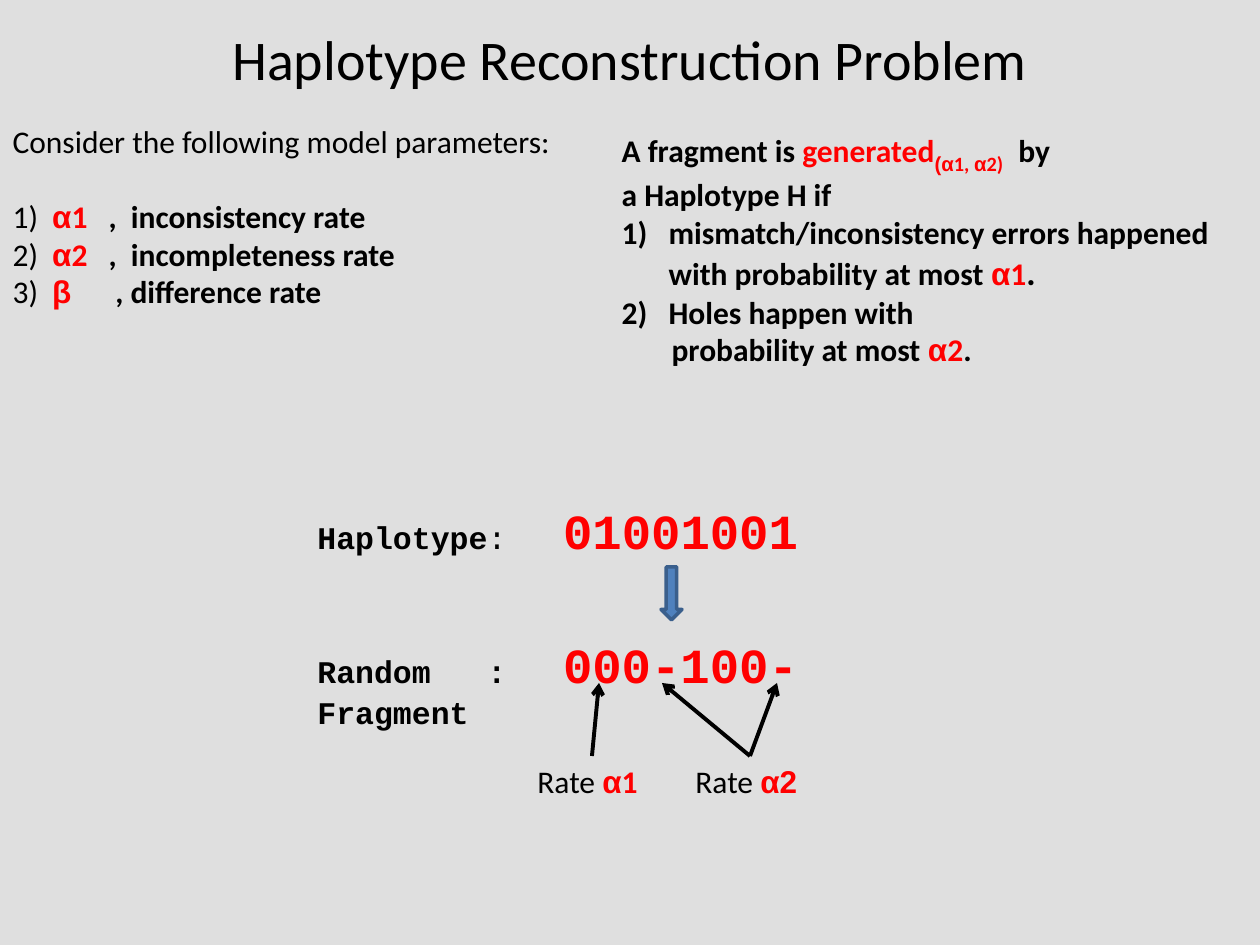
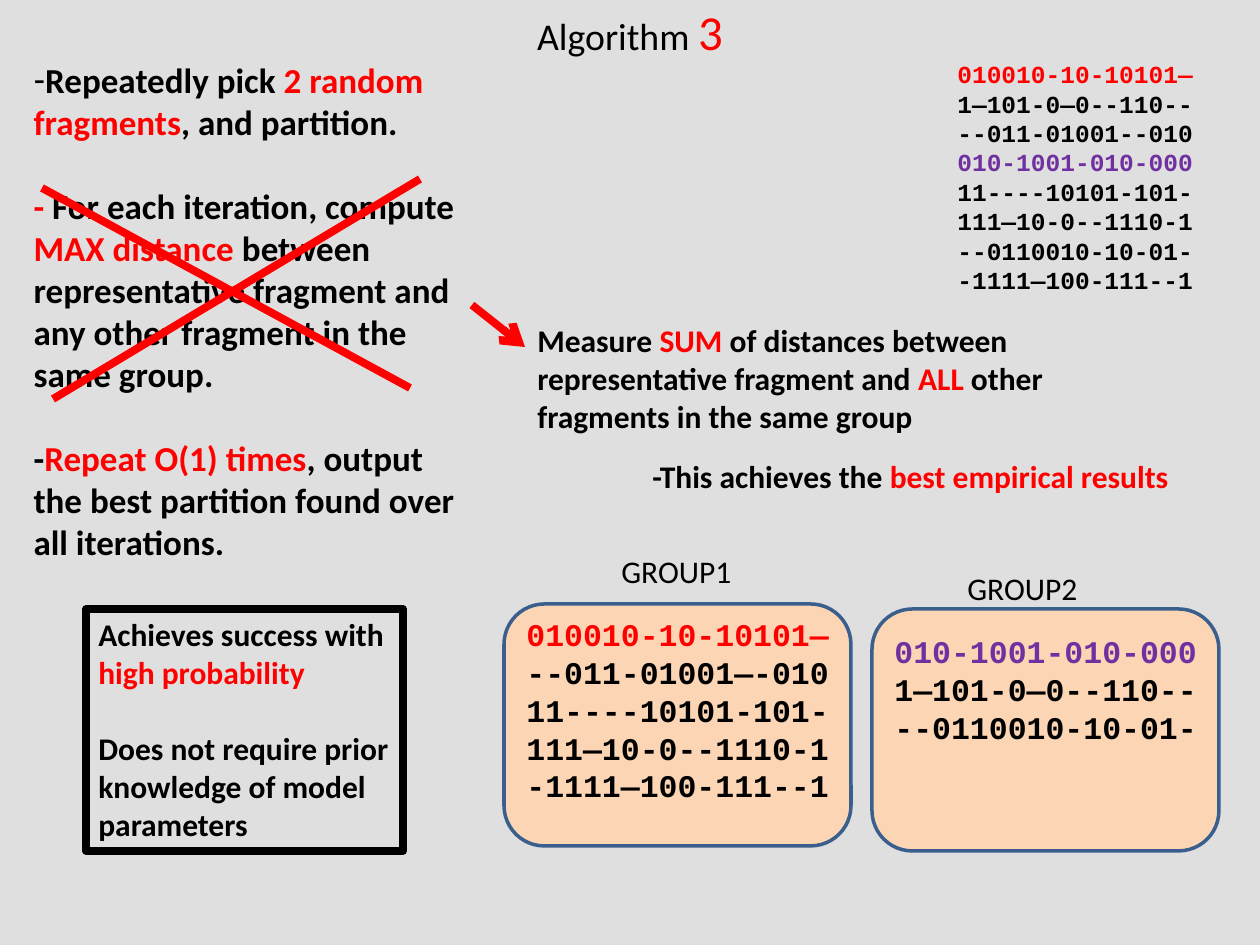
"""Build two slides on haplotype reconstruction: the model and Algorithm 3."""
from dataclasses import dataclass, field
from lxml.etree import SubElement
from pptx import Presentation
from pptx.dml.color import RGBColor as RGB
from pptx.enum.shapes import MSO_CONNECTOR as CONN, MSO_SHAPE as SHAPE
from pptx.enum.text import MSO_ANCHOR as ANCHOR, MSO_AUTO_SIZE as FIT, PP_ALIGN as ALIGN
from pptx.oxml.ns import qn
from pptx.util import Emu, Pt


@dataclass(frozen=True)
class Theme:
    back: str = "DFDFDF"
    ink: str = "000000"
    blue: str = "4F81BD"
    edge: str = "3A5F8C"
    peach: str = "FCD5B5"
    red: str = "FF0000"
    violet: str = "7030A0"
    sans: str = "Calibri"
    mono: str = "Courier New"
    greek: str = "Arial"
    text: float = 18
    sizes: dict = field(default_factory=lambda: {
        "title": 32, "subtitle": 21.6, "number": 27.9,
        "code": 28, "medium": 20, "small": 14})


T = Theme()


def P(*runs, **fmt):
    return runs, fmt


def gap(extra, style=""):
    return " ", style, extra


def sequences(first, color, *rest):
    return [P((first, f"mono bold {color}"))] + [P((s, "mono bold")) for s in rest]


def parameter(number, symbol, spread, rate, **fmt):
    return P((f"{number})", ""), gap(4), *symbol, gap(spread), *rate, **fmt)


MODEL_TITLE = [P(("Haplotype Reconstruction Problem", "title"))]
ALGORITHM_TITLE = [P(("Algorithm ", "subtitle"), ("3", "number red"))]

ALPHA = ("α", "greek bold red")
PARAMETERS = [
    P(("Consider the following model parameters:", "")),
    parameter(1, (ALPHA, ("1", "bold red")), 8,
              ((",", "bold"), gap(4, "bold"), ("inconsistency rate", "bold")), before=21),
    parameter(2, (ALPHA, ("2", "bold red")), 8,
              ((",", "bold"), gap(4, "bold"), ("incompleteness rate", "bold"))),
    parameter(3, (("β", "greek bold red"),), 21, ((", difference rate", "bold"),)),
]
DEFINITION = [
    P(("A fragment is ", "bold"), ("generated", "bold red"),
      ("(α", "greek bold red medium sub"), ("1, ", "bold red medium sub"),
      ("α", "greek bold red medium sub"), ("2)", "bold red medium sub"),
      gap(4.5, "bold"), ("by", "bold")),
    P(("a Haplotype H if", "bold")),
    P(("mismatch/inconsistency errors happened with probability at most ", "bold"),
      ALPHA, ("1", "bold red"), (".", "bold medium"),
      margin=47, indent=-47, number=1),
    P(("Holes happen with", "bold"), margin=47, indent=-47, number=2),
    P(("probability at most ", "bold"), ALPHA, ("2", "bold red"),
      (".", "bold"), margin=50),
]
EXAMPLE = [
    P(("Haplotype", "mono bold"), (":", "mono"), gap(21.6, "mono"),
      ("01001001", "mono bold red code")),
    P(("Random", "mono bold"), gap(21.6, "mono bold"), (":", "mono bold"),
      gap(21.6, "mono bold"), ("000-100-", "mono bold red code"), before=43),
    P(("Fragment", "mono bold")),
]
RATE_1 = [P(("Rate ", ""), ALPHA, ("1", "bold red"))]
RATE_2 = [P(("Rate ", ""), ("α2", "greek bold red"))]

STEPS = [
    P(("Repeatedly pick ", "bold medium"), ("2 random fragments", "bold red medium"),
      (", and partition.", "bold medium"), bullet="-"),
    P(("- ", "bold red medium"), ("For each iteration, compute", "bold medium"), before=24),
    P(("MAX distance ", "bold red medium"),
      ("between representative fragment and any other fragment in the same group.",
       "bold medium")),
    P(("-", "bold medium"), ("Repeat O(1) times", "bold red medium"),
      (", output", "bold medium"), before=24),
    P(("the best partition found over all iterations.", "bold medium")),
]
FRAGMENTS = [P((s, f"mono bold small {color}")) for s, color in (
    ("010010-10-10101—", "red"), ("1—101-0—0--110--", ""), ("--011-01001--010", ""),
    ("010-1001-010-000", "violet"), ("11----10101-101-", ""), ("111—10-0--1110-1", ""),
    ("--0110010-10-01-", ""), ("-1111—100-111--1", ""))]
GROUP_1 = sequences("010010-10-10101—", "red", "--011-01001—-010", "11----10101-101-",
                    "111—10-0--1110-1", "-1111—100-111--1")
GROUP_2 = sequences("010-1001-010-000", "violet", "1—101-0—0--110--", "--0110010-10-01-")
MEASURE = [P(("Measure ", "bold"), ("SUM", "bold red"),
             (" of distances between representative fragment and ", "bold"),
             ("ALL", "bold red"), (" other fragments in the same group", "bold"))]
RESULT = [P(("-This achieves the ", "bold"), ("best empirical results", "bold red"))]
CLAIMS = [
    P(("Achieves success with", "bold")),
    P(("high probability", "bold red")),
    P(("Does not require prior", "bold"), before=22),
    P(("knowledge of model", "bold")),
    P(("parameters", "bold")),
]


def px(n):
    return Emu(round(n * 914400 / 126))


def rgb(name):
    return RGB.from_string(getattr(T, name))


def pick(words, options, default):
    return next((w for w in words if w in options), default)


def style_run(r, style, extra=0):
    words = style.split()
    f = r.font
    f.name = getattr(T, pick(words, ("mono", "greek"), "sans"))
    f.size = Pt(T.sizes.get(pick(words, T.sizes, ""), T.text))
    f.bold = "bold" in words
    f.color.rgb = rgb(pick(words, ("red", "violet"), "ink"))
    if "sub" in words:
        f._element.set("baseline", "-25000")
    if extra:
        f._element.set("spc", str(round(extra * 100)))


def style_paragraph(p, before=0, margin=0, indent=0, number=None, bullet=None):
    p.space_before = Pt(before)
    pPr = p._p.get_or_add_pPr()
    pPr.set("marL", str(px(margin)))
    pPr.set("indent", str(px(indent)))
    if number:
        SubElement(pPr, qn("a:buAutoNum"), type="arabicParenR", startAt=str(number))
    elif bullet:
        SubElement(pPr, qn("a:buChar"), char=bullet)
    else:
        SubElement(pPr, qn("a:buNone"))


def write(sp, paras, wrap=False, fit=FIT.SHAPE_TO_FIT_TEXT, align=ALIGN.LEFT,
          anchor=ANCHOR.TOP):
    tf = sp.text_frame
    tf.word_wrap, tf.auto_size, tf.vertical_anchor = wrap, fit, anchor
    for i, (runs, fmt) in enumerate(paras):
        p = tf.paragraphs[0] if i == 0 else tf.add_paragraph()
        p.alignment = align
        style_paragraph(p, **fmt)
        for text, *style in runs:
            r = p.add_run()
            r.text = text
            style_run(r, *style)


def place(sp, box):
    sp.left, sp.top, sp.width, sp.height = map(px, box)
    return sp


def add_title(s, height, paras):
    write(place(s.shapes.title, (0, 0, 1260, height)), paras, True, FIT.NONE,
          ALIGN.CENTER, ANCHOR.MIDDLE)


def add_body(s, idx, box, paras):
    write(place(s.placeholders[idx], box), paras, True, FIT.NONE)


def add_text(s, box, paras, wrap=False):
    write(s.shapes.add_textbox(*map(px, box)), paras, wrap)


def add_shape(s, kind, box, fill, line, width):
    sp = s.shapes.add_shape(kind, *map(px, box))
    sp.shadow.inherit = False
    if fill:
        sp.fill.solid()
        sp.fill.fore_color.rgb = rgb(fill)
    else:
        sp.fill.background()
    sp.line.color.rgb = rgb(line)
    sp.line.width = Pt(width)
    return sp


def add_line(s, ends, color, width, arrow=False):
    c = s.shapes.add_connector(CONN.STRAIGHT, *map(px, ends))
    c.line.color.rgb = rgb(color)
    c.line.width = Pt(width)
    spPr = c._element.spPr
    if arrow:
        SubElement(spPr.find(qn("a:ln")), qn("a:tailEnd"), type="arrow")
    SubElement(spPr, qn("a:effectLst"))


def build_model(prs):
    s = prs.slides.add_slide(prs.slide_layouts[3])
    add_title(s, 116, MODEL_TITLE)
    add_body(s, 1, (0, 116, 588, 242), PARAMETERS)
    add_body(s, 2, (609, 121, 630, 246), DEFINITION)
    add_text(s, (305, 494, 509, 246), EXAMPLE)
    for x, paras in ((525, RATE_1), (683, RATE_2)):
        add_text(s, (x, 756, 135, 50), paras)
    for start, tip in ((592, 599), (750, 662), (750, 777)):
        add_line(s, (start, 756, tip, 683), "ink", 2.25, True)
    add_shape(s, SHAPE.DOWN_ARROW, (661, 567, 21, 53), "blue", "edge", 2)


def build_algorithm(prs):
    s = prs.slides.add_slide(prs.slide_layouts[1])
    add_title(s, 63, ALGORITHM_TITLE)
    add_body(s, 1, (21, 52, 473, 522), STEPS)
    add_text(s, (945, 53, 262, 251), FRAGMENTS)
    groups = (("GROUP1", 609, 546, (504, 604), (514, 609), GROUP_1),
              ("GROUP2", 955, 563, (872, 609), (882, 626), GROUP_2))
    for name, x, y, panel, rows, paras in groups:
        add_shape(s, SHAPE.ROUNDED_RECTANGLE, (*panel, 347, 242), "peach", "edge", 2)
        add_text(s, (x, y, 136, 50), [P((name, ""))])
        add_text(s, (*rows, 329, 204), paras)
    write(add_shape(s, SHAPE.RECTANGLE, (86, 609, 317, 242), None, "ink", 4.5), CLAIMS)
    add_text(s, (525, 315, 630, 127), MEASURE, True)
    add_text(s, (640, 451, 547, 50), RESULT)
    for ends, arrow in (((42, 188, 410, 388), False), ((420, 179, 53, 399), False),
                        ((472, 305, 525, 347), True)):
        add_line(s, ends, "red", 4.5, arrow)


def main():
    prs = Presentation()
    prs.slide_width, prs.slide_height = px(1260), px(945)
    fill = prs.slide_master.background.fill
    fill.solid()
    fill.fore_color.rgb = rgb("back")
    build_model(prs)
    build_algorithm(prs)
    prs.save("out.pptx")


if __name__ == "__main__":
    main()
